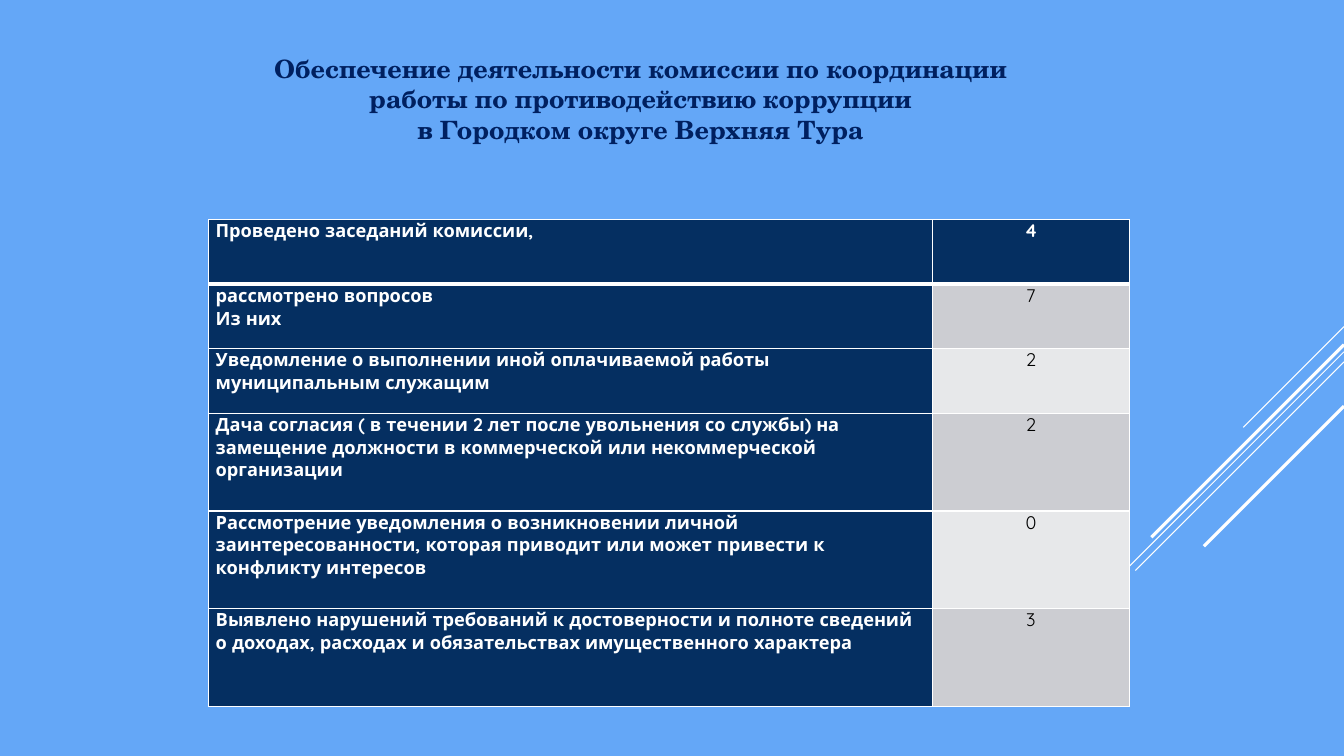
import pptx
import pptx.util
import pptx.dml.color
import pptx.enum.shapes
import pptx.enum.text
import pptx.oxml
import pptx.oxml.ns

PX = 9144  # 100 px to the inch
HUES = {"sky": "64A7F7", "navy": "052F61", "title": "002060", "white": "FFFFFF",
        "black": "000000", "dark": "CCCDD2", "light": "E7E8EA"}
SIZE = (1333, 750)
TITLE = ("Обеспечение деятельности комиссии по координации работы "
         "по противодействию коррупции\vв Городком округе Верхняя Тура")
ROWS = [
    ("Проведено заседаний комиссии,", "4", 64),
    ("рассмотрено вопросов\nИз них", "7", 64),
    ("Уведомление о выполнении иной оплачиваемой работы муниципальным служащим", "2", 64),
    ("Дача согласия ( в течении 2 лет после увольнения со службы) на замещение "
     "должности в коммерческой или некоммерческой организации", "2", 97),
    ("Рассмотрение уведомления о возникновении личной заинтересованности, "
     "которая приводит или может привести к конфликту интересов", "0", 97),
    ("Выявлено нарушений требований к достоверности и полноте сведений "
     "о доходах, расходах и обязательствах имущественного характера", "3", 97),
]
COLS = (718, 195)
# top on the right edge, horizontal run, width in points
RAYS = [(324, 100, 0.75), (349, 326, 0.75), (359, 207, 0.75),
        (342, 191, 2.25), (403, 139, 2.25)]


def emu(*nums):
    return [pptx.util.Emu(num * PX) for num in nums]


def hue(name):
    return pptx.dml.color.RGBColor.from_string(HUES[name])


def style(frame, face, size, color, bold, align):
    for para in frame.paragraphs:
        para.alignment = align
        for run in para.runs:
            font = run.font
            font.name, font.size, font.bold = face, pptx.util.Pt(size), bold
            font.color.rgb = hue(color)


def draw_rays(slide, right):
    """Diagonal lines falling at 45 degrees from the right edge."""
    for top, run, width in RAYS:
        ray = slide.shapes.add_connector(
            pptx.enum.shapes.MSO_CONNECTOR.STRAIGHT,
            *emu(right, top, right - run, top + run))
        ray.line.color.rgb = hue("white")
        ray.line.width = pptx.util.Pt(width)
        ray._element.spPr.append(pptx.oxml.parse_xml(
            f"<a:effectLst {pptx.oxml.ns.nsdecls('a')}/>"))


def draw_title(slide, box):
    frame = slide.shapes.add_textbox(*emu(*box)).text_frame
    frame.word_wrap = True
    frame.auto_size = pptx.enum.text.MSO_AUTO_SIZE.SHAPE_TO_FIT_TEXT
    frame.text = TITLE
    style(frame, "TeX Gyre Schola", 18, "title", True, pptx.enum.text.PP_ALIGN.CENTER)


def edge(cell, side, points):
    cell._tc.get_or_add_tcPr().append(pptx.oxml.parse_xml(
        f'<a:ln{side} {pptx.oxml.ns.nsdecls("a")} w="{points * 12700}"><a:solidFill>'
        f'<a:srgbClr val="{HUES["white"]}"/></a:solidFill></a:ln{side}>'))


def fill_cell(cell, text, row, col):
    head = row == 0
    label = head or col == 0
    cell.margin_left = cell.margin_right = emu(7)[0]
    cell.margin_top = cell.margin_bottom = 0
    for side in "LRTB":
        thick = (head and side == "B") or (row == 1 and side == "T")
        edge(cell, side, 3 if thick else 1)
    cell.fill.solid()
    cell.fill.fore_color.rgb = hue("navy" if label else "dark" if row % 2 else "light")
    cell.text_frame.text = text
    align = pptx.enum.text.PP_ALIGN
    style(cell.text_frame, "Quicksand", 13, "white" if label else "black", label,
          align.CENTER if col else align.LEFT)


def draw_table(slide, left, top):
    high = sum(row[2] for row in ROWS)
    table = slide.shapes.add_table(
        len(ROWS), len(COLS), *emu(left, top, sum(COLS), high)).table
    for col, width in enumerate(COLS):
        table.columns[col].width = emu(width)[0]
    for row, (label, count, height) in enumerate(ROWS):
        table.rows[row].height = emu(height)[0]
        for col, text in enumerate((label, count)):
            fill_cell(table.cell(row, col), text, row, col)


def main():
    deck = pptx.Presentation()
    deck.slide_width, deck.slide_height = emu(*SIZE)
    slide = deck.slides.add_slide(deck.slide_layouts[6])
    slide.background.fill.solid()
    slide.background.fill.fore_color.rgb = hue("sky")
    draw_rays(slide, SIZE[0])
    draw_table(slide, 207, 218)
    draw_title(slide, (222, 48, 827, 101))
    deck.save("out.pptx")


if __name__ == "__main__":
    main()
